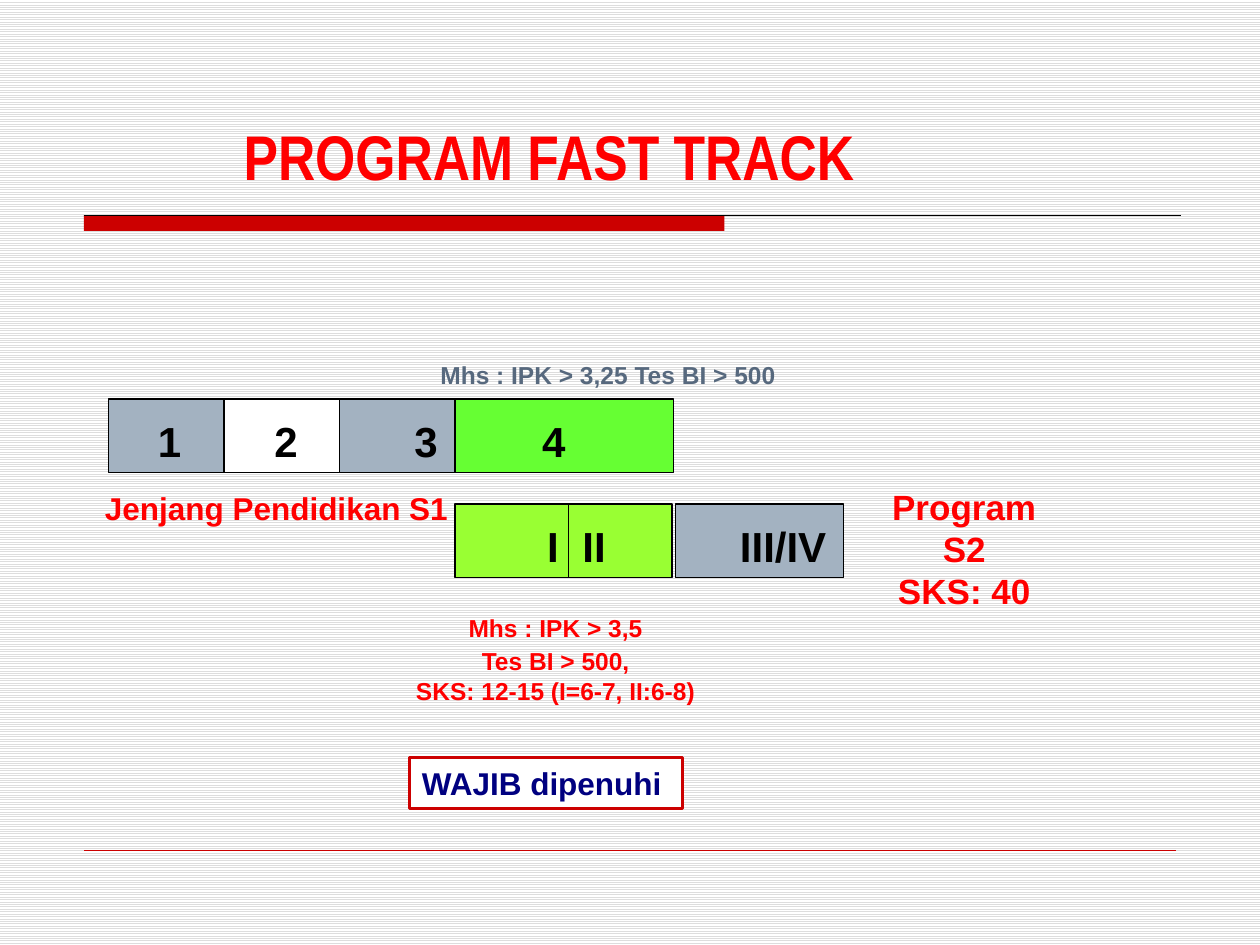
import pptx
import pptx.util
import pptx.dml.color
import pptx.enum.dml
import pptx.enum.shapes
import pptx.enum.text
import pptx.oxml

Pt = pptx.util.Pt
Align = pptx.enum.text.PP_ALIGN
Anchor = pptx.enum.text.MSO_ANCHOR

THEME = {
    "font": "Arial", "title font": "Arial Narrow",
    "title": 36, "box": 24, "program": 20, "label": 18, "note": 14,
    "red": "FF0000", "rule": "CC0000", "black": "000000", "white": "FFFFFF",
    "slate": "57697E", "gray": "A3B2C1", "green": "66FF33", "lime": "99FF33",
    "navy": "000080", "stripe": "DDDDDD",
}

TITLE = "PROGRAM FAST TRACK"
BOX_HEIGHT = 42
# top of row, then boxes from back to front: text, left, width, text centre, fill
ROWS = [
    (228, [("1", 62, 66, 97, "gray"), ("2", 128, 66, 163.5, "white"),
           ("3", 194, 66, 243.5, "gray"), ("4", 260, 125, 316.5, "green")]),
    (288, [("II", 318, 66, 339.5, "lime"), ("I", 260, 65, 316, "lime"),
           ("III/IV", 386, 96, 447.5, "gray")]),
]
# lines, (left, top, width, height), size, colour, top inset, gap before second line
LABELS = [
    (["Mhs : IPK > 3,25 Tes BI > 500"], (237, 192, 221, 37), "note", "slate", 14, 0),
    (["Jenjang Pendidikan S1"], (52, 276, 212, 29), "label", "red", 3.6, 0),
    (["Program", "S2", "SKS: 40"], (502, 274, 98, 80), "program", "red", 3.6, 0),
    (["Mhs : IPK > 3,5", "Tes BI > 500,", "SKS: 12-15 (I=6-7, II:6-8)"],
     (228, 337, 179, 71), "note", "red", 13.5, 2),
]
REQUIREMENT = ("WAJIB dipenuhi", (234, 433, 156, 29))


def color(name):
    return pptx.dml.color.RGBColor.from_string(THEME[name])


def style(paragraph, size, color_name, align=Align.CENTER, font="font"):
    paragraph.alignment = align
    paragraph.font.name = THEME[font]
    paragraph.font.size = Pt(THEME[size])
    paragraph.font.bold = True
    paragraph.font.color.rgb = color(color_name)


def add_box(slide, frame, fill, line=None, width=0.75):
    shape = slide.shapes.add_shape(
        pptx.enum.shapes.MSO_SHAPE.RECTANGLE, *map(Pt, frame))
    shape.shadow.inherit = False
    shape.fill.solid()
    shape.fill.fore_color.rgb = color(fill)
    if line:
        shape.line.color.rgb = color(line)
        shape.line.width = Pt(width)
    else:
        shape.line.fill.background()
    return shape


def add_rule(slide, left, right, y, line, width):
    rule = slide.shapes.add_connector(
        pptx.enum.shapes.MSO_CONNECTOR.STRAIGHT, Pt(left), Pt(y), Pt(right), Pt(y))
    rule.line.color.rgb = color(line)
    rule.line.width = Pt(width)
    rule._element.spPr.append(pptx.oxml.parse_xml(
        '<a:effectLst xmlns:a="http://schemas.openxmlformats.org/drawingml/2006/main"/>'))


def add_stage(slide, top, text, left, width, centre, fill):
    """Draw a box whose text is centred on the given x, by way of its insets."""
    shape = add_box(slide, (left, top, width, BOX_HEIGHT), fill, "black")
    shift = 2 * centre - (2 * left + width)
    frame = shape.text_frame
    frame.margin_left, frame.margin_right = Pt(max(shift, 0)), Pt(max(-shift, 0))
    frame.margin_top, frame.margin_bottom = Pt(6), Pt(0)
    frame.vertical_anchor = Anchor.MIDDLE
    frame.word_wrap = False
    frame.text = text
    style(frame.paragraphs[0], "box", "black")


def add_label(slide, lines, place, size, color_name, inset, gap):
    frame = slide.shapes.add_textbox(*map(Pt, place)).text_frame
    frame.word_wrap = True
    frame.margin_top = Pt(inset)
    frame.text = "\n".join(lines)
    for paragraph in frame.paragraphs:
        style(paragraph, size, color_name)
    if gap:
        frame.paragraphs[1].space_before = Pt(gap)


def main():
    presentation = pptx.Presentation()
    presentation.slide_width, presentation.slide_height = Pt(720), Pt(540)
    slide = presentation.slides.add_slide(presentation.slide_layouts[5])
    background = slide.background.fill
    background.patterned()
    background.pattern = pptx.enum.dml.MSO_PATTERN.LIGHT_HORIZONTAL
    background.fore_color.rgb = color("stripe")
    background.back_color.rgb = color("white")

    title = slide.shapes.title
    title.left, title.top, title.width, title.height = map(Pt, (132, 48, 449, 66))
    title.text_frame.text = TITLE
    title.text_frame.vertical_anchor = Anchor.BOTTOM
    style(title.text_frame.paragraphs[0], "title", "red", Align.LEFT, "title font")

    add_box(slide, (48, 123, 366, 9), "rule")
    add_rule(slide, 48, 675, 123, "black", 0.75)
    add_rule(slide, 48, 672, 486, "rule", 0.25)

    for top, stages in ROWS:
        for stage in stages:
            add_stage(slide, top, *stage)
    for label in LABELS:
        add_label(slide, *label)

    text, place = REQUIREMENT
    frame = add_box(slide, place, "white", "rule", 2).text_frame
    frame.text = text
    style(frame.paragraphs[0], "label", "navy", Align.LEFT)

    presentation.save("out.pptx")


if __name__ == "__main__":
    main()
